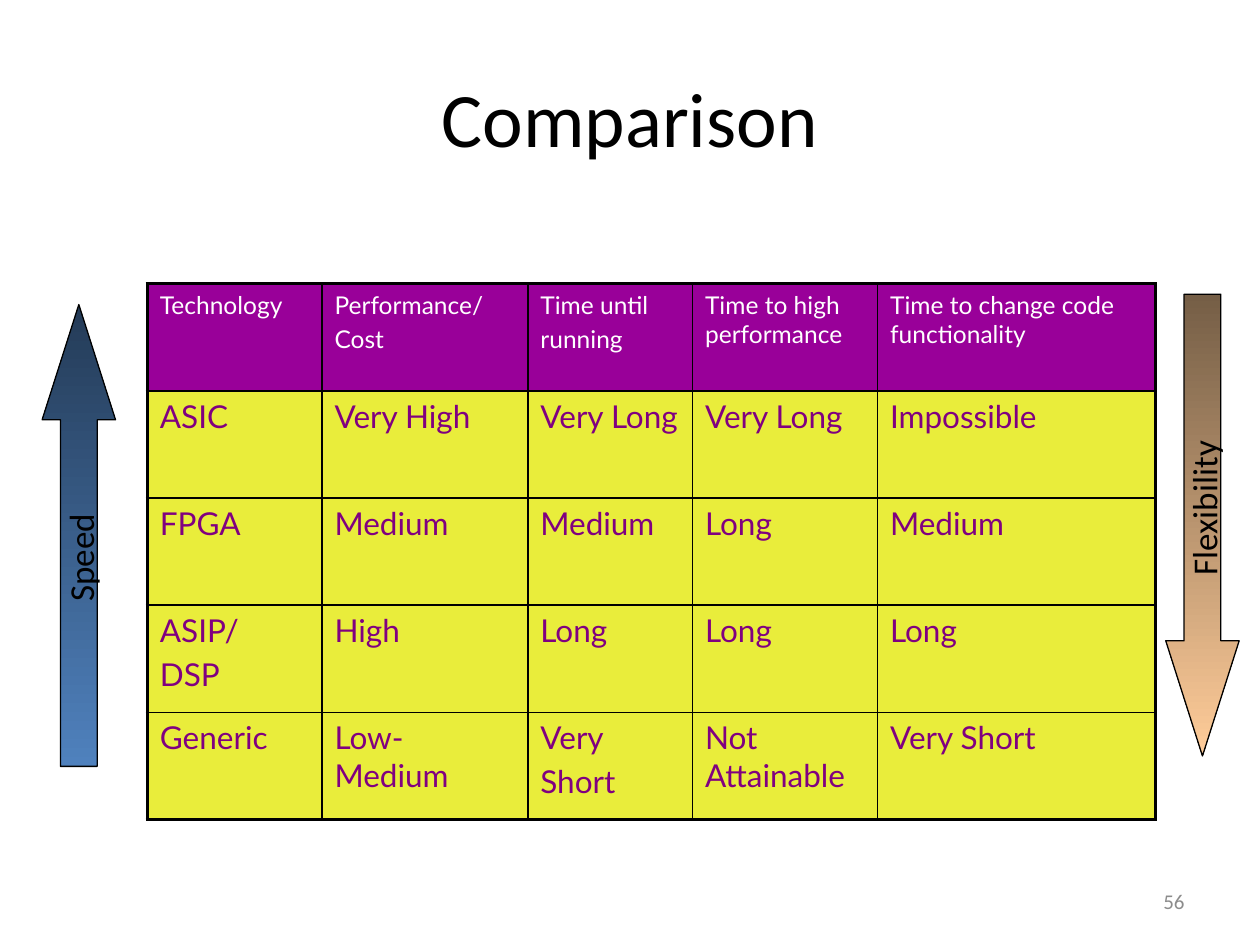
"""Build a slide comparing hardware technologies by speed and flexibility."""
from pptx import Presentation
from pptx.dml.color import RGBColor
from pptx.enum.shapes import MSO_SHAPE
from pptx.enum.text import MSO_ANCHOR, PP_ALIGN
from pptx.oxml import parse_xml
from pptx.oxml.ns import nsdecls, qn
from pptx.util import Cm, Pt

UP_ARROW = MSO_SHAPE.UP_ARROW
MIDDLE = MSO_ANCHOR.MIDDLE
LEFT, CENTER, RIGHT = PP_ALIGN.LEFT, PP_ALIGN.CENTER, PP_ALIGN.RIGHT

BLACK = RGBColor(0x00, 0x00, 0x00)
WHITE = RGBColor(0xFF, 0xFF, 0xFF)
GRAY = RGBColor(0x8C, 0x8C, 0x8C)
MAGENTA = RGBColor(0x99, 0x00, 0x99)
PURPLE = RGBColor(0x80, 0x00, 0x80)
YELLOW = RGBColor(0xE9, 0xED, 0x3B)
DARK_BLUE = RGBColor(0x24, 0x3B, 0x57)
BLUE = RGBColor(0x4F, 0x81, 0xBD)
BROWN = RGBColor(0x75, 0x5E, 0x46)
PEACH = RGBColor(0xFF, 0xCC, 0x99)

ROWS = [
    ["Technology", "Performance/\nCost", "Time until\nrunning",
     "Time to high performance", "Time to change code functionality"],
    ["ASIC", "Very High", "Very Long", "Very Long", "Impossible"],
    ["FPGA", "Medium", "Medium", "Long", "Medium"],
    ["ASIP/\nDSP", "High", "Long", "Long", "Long"],
    ["Generic", "Low-Medium", "Very\nShort", "Not Attainable", "Very Short"],
]
COLUMN_WIDTHS = [3.52, 4.15, 3.32, 3.73, 5.6]
ROW_HEIGHT = 2.16
ARROWS = [
    (0.85, 6.14, 0, DARK_BLUE, BLUE),
    (23.5, 5.93, 180, BROWN, PEACH),
]
LABELS = [
    ("Speed", 0.41, 10.62, 2.41),
    ("Flexibility", 22.56, 9.6, 3.4),
]


def format_paragraph(paragraph, size, color, font="Calibri", alignment=LEFT):
    paragraph.alignment = alignment
    paragraph.font.name = font
    paragraph.font.size = Pt(size)
    paragraph.font.color.rgb = color


def add_label(slide, text, box, size, color, alignment=LEFT, wrap=False):
    label = slide.shapes.add_textbox(*map(Cm, box))
    label.text_frame.word_wrap = wrap
    label.text_frame.text = text
    format_paragraph(label.text_frame.paragraphs[0], size, color, alignment=alignment)
    return label


def set_borders(cell, outer_sides):
    properties = cell._tc.get_or_add_tcPr()
    for position, side in enumerate(("L", "R", "T", "B")):
        width = Pt(2.25 if side in outer_sides else 1)
        properties.insert(position, parse_xml(
            f'<a:ln{side} {nsdecls("a")} w="{width}"><a:solidFill>'
            f'<a:srgbClr val="{BLACK}"/></a:solidFill></a:ln{side}>'))


def add_comparison_table(slide):
    row_count, column_count = len(ROWS), len(COLUMN_WIDTHS)
    table = slide.shapes.add_table(
        row_count, column_count, Cm(2.97), Cm(5.72),
        Cm(sum(COLUMN_WIDTHS)), Cm(ROW_HEIGHT * row_count)).table
    for column, width in zip(table.columns, COLUMN_WIDTHS):
        column.width = Cm(width)
    for row_index, texts in enumerate(ROWS):
        table.rows[row_index].height = Cm(ROW_HEIGHT)
        fill, color, size = (YELLOW, PURPLE, 18) if row_index else (MAGENTA, WHITE, 14)
        for column_index, text in enumerate(texts):
            cell = table.cell(row_index, column_index)
            cell.text = text
            cell.fill.solid()
            cell.fill.fore_color.rgb = fill
            for paragraph in cell.text_frame.paragraphs:
                format_paragraph(paragraph, size, color, font="Lato")
                paragraph.font.bold = False
                paragraph.space_before = Pt(size * 0.2)
            edges = {"L": column_index == 0, "R": column_index == column_count - 1,
                     "T": row_index == 0, "B": row_index == row_count - 1}
            set_borders(cell, [side for side, is_outer in edges.items() if is_outer])


def add_arrow(slide, left, top, rotation, top_color, bottom_color):
    arrow = slide.shapes.add_shape(UP_ARROW, Cm(left), Cm(top), Cm(1.48), Cm(9.31))
    arrow.adjustments[0] = 0.5
    arrow.adjustments[1] = 1.57
    arrow.rotation = rotation
    arrow.shadow.inherit = False
    arrow.line.color.rgb = BLACK
    arrow.line.width = Pt(0.75)
    arrow.fill.gradient()
    arrow.fill.gradient_angle = 270
    for stop, color in zip(arrow.fill.gradient_stops, (top_color, bottom_color)):
        stop.color.rgb = color
    arrow.element.spPr.find(qn("a:gradFill")).set("rotWithShape", "0")


def main():
    presentation = Presentation()
    presentation.slide_width = Cm(25.4)
    presentation.slide_height = Cm(19.05)
    slide = presentation.slides.add_slide(presentation.slide_layouts[5])

    title = slide.shapes.title
    title.left, title.top, title.width, title.height = map(Cm, (1.27, 0.76, 22.86, 3.18))
    title.text_frame.text = "Comparison"
    title.text_frame.vertical_anchor = MIDDLE
    format_paragraph(title.text_frame.paragraphs[0], 44, BLACK, alignment=CENTER)

    number = add_label(slide, "56", (18.2, 17.66, 5.93, 1.01), 12, GRAY, RIGHT, wrap=True)
    number.text_frame.vertical_anchor = MIDDLE

    add_comparison_table(slide)
    for arrow in ARROWS:
        add_arrow(slide, *arrow)
    for text, left, top, width in LABELS:
        add_label(slide, text, (left, top, width, 1.1), 20, BLACK).rotation = 270

    presentation.save("out.pptx")


if __name__ == "__main__":
    main()
